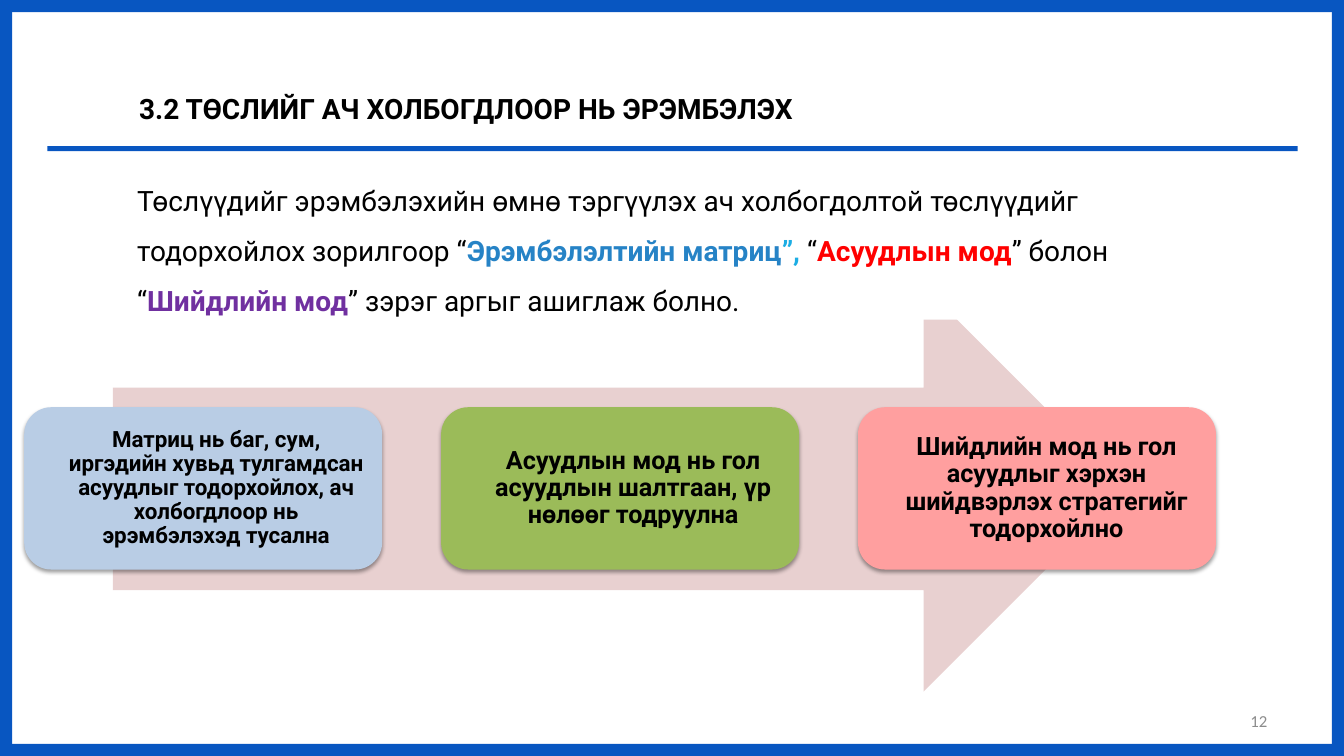
from dataclasses import dataclass

from lxml import etree
from pptx import Presentation
from pptx.dml.color import RGBColor
from pptx.enum.shapes import MSO_SHAPE
from pptx.enum.text import MSO_ANCHOR, MSO_AUTO_SIZE, PP_ALIGN
from pptx.oxml.ns import qn
from pptx.util import Inches, Pt

RECTANGLE = MSO_SHAPE.RECTANGLE
ROUNDED = MSO_SHAPE.ROUNDED_RECTANGLE
ARROW = MSO_SHAPE.RIGHT_ARROW
TOP, MIDDLE = MSO_ANCHOR.TOP, MSO_ANCHOR.MIDDLE
LEFT, CENTER, RIGHT = PP_ALIGN.LEFT, PP_ALIGN.CENTER, PP_ALIGN.RIGHT

BLACK = RGBColor(0x00, 0x00, 0x00)
WHITE = RGBColor(0xFF, 0xFF, 0xFF)
FRAME_BLUE = RGBColor(0x08, 0x56, 0xC1)
ARROW_PINK = RGBColor(0xE8, 0xD0, 0xD0)
CARD_BLUE = RGBColor(0xB9, 0xCD, 0xE5)
CARD_GREEN = RGBColor(0x9B, 0xBB, 0x59)
CARD_RED = RGBColor(0xFF, 0x9F, 0x9F)
MATRIX_BLUE = RGBColor(0x26, 0x83, 0xC6)
COMMA_BLUE = RGBColor(0x1C, 0xAD, 0xE4)
PROBLEM_RED = RGBColor(0xFF, 0x00, 0x00)
SOLUTION_PURPLE = RGBColor(0x70, 0x30, 0xA0)
NUMBER_GREY = RGBColor(0x8C, 0x8C, 0x8C)

SLIDE_W, SLIDE_H, BORDER = 13.33, 7.5, 0.12
CARD_LEFT, CARD_TOP, CARD_W, CARD_H, CARD_STEP = 0.24, 4.04, 3.55, 1.61, 4.135


@dataclass
class Span:
    text: str
    color: RGBColor = BLACK
    bold: bool = False


@dataclass
class Card:
    text: str
    fill: RGBColor
    size: int
    indent: float


CARDS = [
    Card("Матриц нь баг, сум, иргэдийн хувьд тулгамдсан асуудлыг тодорхойлох, "
         "ач холбогдлоор нь эрэмбэлэхэд тусална", CARD_BLUE, 16, 0.26),
    Card("Асуудлын мод нь гол асуудлын шалтгаан, үр нөлөөг тодруулна",
         CARD_GREEN, 18, 0.26),
    Card("Шийдлийн мод нь гол асуудлыг хэрхэн шийдвэрлэх стратегийг тодорхойлно",
         CARD_RED, 18, 0.19),
]

INTRO = [
    Span("Төслүүдийг эрэмбэлэхийн өмнө тэргүүлэх ач холбогдолтой төслүүдийг "
         "тодорхойлох зорилгоор “"),
    Span("Эрэмбэлэлтийн матриц", MATRIX_BLUE, True),
    Span("”, ", COMMA_BLUE, True),
    Span("“"),
    Span("Асуудлын мод", PROBLEM_RED, True),
    Span("” болон “"),
    Span("Шийдлийн мод", SOLUTION_PURPLE, True),
    Span("” зэрэг аргыг ашиглаж болно."),
]


def write(shape, spans: list[Span], size: int, font: str = "Roboto",
          align: PP_ALIGN = LEFT, anchor: MSO_ANCHOR = MIDDLE,
          spacing: float = 1.0, indent: float = 0,
          margins: tuple[float, float] = (0.1, 0.05)) -> None:
    """Fill a shape with one paragraph of formatted spans."""
    frame = shape.text_frame
    frame.word_wrap = True
    frame.auto_size = MSO_AUTO_SIZE.NONE
    frame.vertical_anchor = anchor
    frame.margin_left = frame.margin_right = Inches(margins[0])
    frame.margin_top = frame.margin_bottom = Inches(margins[1])
    paragraph = frame.paragraphs[0]
    paragraph.alignment = align
    paragraph.line_spacing = spacing
    paragraph.space_before = Pt(0)
    properties = paragraph._p.get_or_add_pPr()
    properties.set("marL", str(Inches(indent)))
    properties.set("indent", "0")
    etree.SubElement(properties, qn("a:buNone"))
    for span in spans:
        run = paragraph.add_run()
        run.text = span.text
        run.font.name = font
        run.font.size = Pt(size)
        run.font.bold = span.bold
        run.font.color.rgb = span.color


def place(shape, left: float, top: float, width: float, height: float) -> None:
    shape.left, shape.top = Inches(left), Inches(top)
    shape.width, shape.height = Inches(width), Inches(height)


def add_block(slide, kind: MSO_SHAPE, left: float, top: float,
              width: float, height: float, fill: RGBColor):
    block = slide.shapes.add_shape(
        kind, Inches(left), Inches(top), Inches(width), Inches(height))
    block.shadow.inherit = False
    block.fill.solid()
    block.fill.fore_color.rgb = fill
    block.line.fill.background()
    return block


def add_soft_shadow(shape) -> None:
    effects = shape._element.spPr.find(qn("a:effectLst"))
    shadow = etree.SubElement(
        effects, qn("a:outerShdw"), blurRad=str(Pt(3.1)), dist=str(Pt(1.6)),
        dir="5400000", rotWithShape="0")
    color = etree.SubElement(shadow, qn("a:srgbClr"), val=str(BLACK))
    etree.SubElement(color, qn("a:alpha"), val="38000")


def add_card(slide, position: int, card: Card) -> None:
    block = add_block(slide, ROUNDED, CARD_LEFT + position * CARD_STEP,
                      CARD_TOP, CARD_W, CARD_H, card.fill)
    add_soft_shadow(block)
    write(block, [Span(card.text, bold=True)], card.size, align=CENTER,
          spacing=0.9, indent=card.indent, margins=(0.07, 0.07))


def main() -> None:
    deck = Presentation()
    deck.slide_width, deck.slide_height = Inches(SLIDE_W), Inches(SLIDE_H)
    slide = deck.slides.add_slide(deck.slide_layouts[1])
    heading, intro = slide.shapes.title, slide.placeholders[1]

    # Frame and the rule under the heading
    for bar in (
        (0.47, 1.45, 12.4, 0.05),
        (0, 0, SLIDE_W, BORDER),
        (0, SLIDE_H - BORDER, SLIDE_W, BORDER),
        (0, 0, BORDER, SLIDE_H),
        (SLIDE_W - BORDER, 0, BORDER, SLIDE_H),
    ):
        add_block(slide, RECTANGLE, *bar, FRAME_BLUE)

    # Arrow with the three methods
    add_block(slide, ARROW, 1.12, 2.84, 10.05, 4.02, ARROW_PINK)
    for position, card in enumerate(CARDS):
        add_card(slide, position, card)

    # Introduction, in front of the arrow's upper tip
    slide.shapes.element.append(intro.element)
    place(intro, 1.3, 1.63, 10.48, 1.54)
    intro.fill.solid()
    intro.fill.fore_color.rgb = WHITE
    write(intro, INTRO, 20, spacing=1.5, margins=(0.06, 0.03))

    # Heading
    place(heading, 1.28, 0.86, 10.25, 0.44)
    write(heading, [Span("3.2 ТӨСЛИЙГ АЧ ХОЛБОГДЛООР НЬ ЭРЭМБЭЛЭХ", bold=True)],
          20, anchor=TOP)

    # Page number
    page_number = slide.shapes.add_textbox(
        Inches(9.56), Inches(6.95), Inches(3.11), Inches(0.4))
    write(page_number, [Span("12", NUMBER_GREY)], 12, font="Calibri", align=RIGHT)

    deck.save("out.pptx")


if __name__ == "__main__":
    main()
